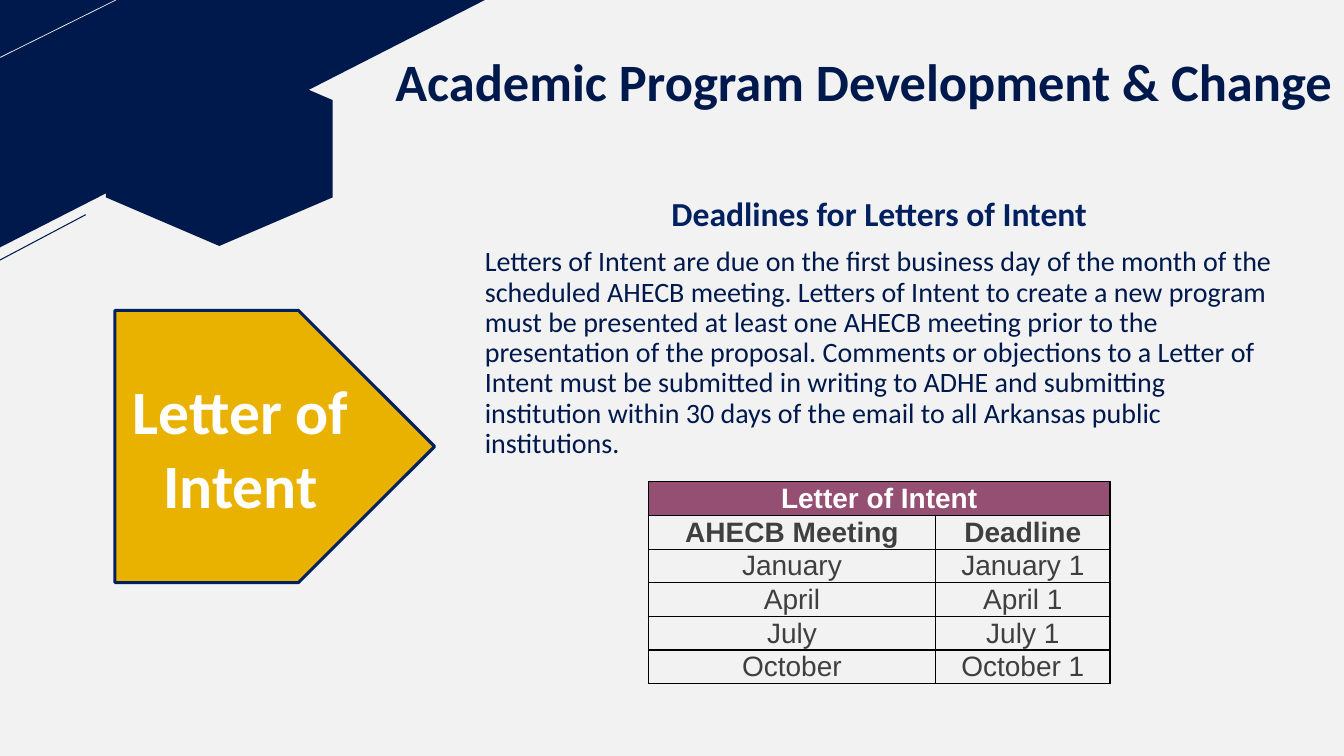
from dataclasses import dataclass

from lxml.etree import SubElement
from pptx import Presentation
from pptx.dml.color import RGBColor
from pptx.enum.shapes import MSO_CONNECTOR, MSO_SHAPE
from pptx.enum.text import MSO_ANCHOR, PP_ALIGN
from pptx.oxml.ns import qn
from pptx.util import Emu, Pt

PX = 9144  # 100 px to the inch
COLORS = {
    "paper": "F2F2F2",
    "navy": "00194C",
    "blue": "002060",
    "gold": "EAB200",
    "plum": "954F72",
    "white": "FFFFFF",
    "gray": "3F3F3F",
    "black": "000000",
}


@dataclass(frozen=True)
class Box:
    left: int
    top: int
    width: int
    height: int

    def emu(self) -> list[Emu]:
        return [px(n) for n in (self.left, self.top, self.width, self.height)]


@dataclass(frozen=True)
class Style:
    size: float
    color: str
    bold: bool = False
    align: PP_ALIGN = PP_ALIGN.CENTER
    font: str = "Calibri"
    spacing: float = 1.0


@dataclass(frozen=True)
class Block:
    kind: MSO_SHAPE
    box: Box
    fill: str
    rotation: int = 0
    outline: str = ""


@dataclass(frozen=True)
class Rule:
    start: tuple[int, int]
    end: tuple[int, int]
    color: str
    weight: float


CORNER = Block(MSO_SHAPE.RIGHT_TRIANGLE, Box(117, -118, 246, 482), "navy", 90)
HEXAGON = Block(MSO_SHAPE.HEXAGON, Box(121, 35, 193, 225), "navy", 270)
ARROW = Block(MSO_SHAPE.PENTAGON, Box(114, 308, 317, 270), "gold", 0, "blue")
RULES = [
    Rule((-2, 58), (115, 0), "paper", 0.5),
    Rule((-2, 259), (85, 213), "navy", 0.75),
]

TITLE = Style(37.5, "navy", bold=True, spacing=0.9)
HEADING = Style(24, "blue", bold=True, spacing=0.9)
BODY = Style(20, "navy", align=PP_ALIGN.LEFT, spacing=0.9)
ARROW_LABEL = Style(44, "white", bold=True)
TABLE_TITLE = Style(20, "white", bold=True, font="Arial")
TABLE_HEAD = Style(20, "gray", bold=True, font="Arial")
TABLE_BODY = Style(20, "gray", font="Arial")

BODY_TEXT = (
    "Letters of Intent are due on the first business day of the month of the "
    "scheduled AHECB meeting. Letters of Intent to create a new program must be "
    "presented at least one AHECB meeting prior to the presentation of the proposal. "
    "Comments or objections to a Letter of Intent must be submitted in writing to "
    "ADHE and submitting institution within 30 days of the email to all Arkansas "
    "public institutions."
)
MONTHS = ["January", "April", "July", "October"]
TABLE_ROWS = [
    ("Letter of Intent",),
    ("AHECB Meeting", "Deadline"),
    *((month, f"{month} 1") for month in MONTHS),
]
TABLE_BOX = Box(643, 478, 458, 192)
COLUMN_WIDTHS = [285, 173]


def px(count: int) -> Emu:
    return Emu(count * PX)


def rgb(name: str) -> RGBColor:
    return RGBColor.from_string(COLORS[name])


def write(frame, lines: list[tuple[str, Style]], gap: int = 0) -> None:
    """Fill a text frame, one paragraph a line, with gap points between them."""
    for index, (text, style) in enumerate(lines):
        para = frame.add_paragraph() if index else frame.paragraphs[0]
        para.text = text
        para.alignment = style.align
        para.line_spacing = style.spacing
        if index and gap:
            para.space_before = Pt(gap)
        para.font.name = style.font
        para.font.size = Pt(style.size)
        para.font.bold = style.bold
        para.font.color.rgb = rgb(style.color)


def add_block(page, block: Block):
    shape = page.shapes.add_shape(block.kind, *block.box.emu())
    shape.rotation = block.rotation
    shape.shadow.inherit = False
    shape.fill.solid()
    shape.fill.fore_color.rgb = rgb(block.fill)
    if block.outline:
        shape.line.color.rgb = rgb(block.outline)
        shape.line.width = Pt(2.25)
    else:
        shape.line.fill.background()
    return shape


def add_rule(page, rule: Rule) -> None:
    ends = [px(n) for n in (*rule.start, *rule.end)]
    line = page.shapes.add_connector(MSO_CONNECTOR.STRAIGHT, *ends)
    line.line.color.rgb = rgb(rule.color)
    line.line.width = Pt(rule.weight)
    SubElement(line._element.spPr, qn("a:effectLst"))


def add_text(page, box: Box, lines: list[tuple[str, Style]], gap: int = 0):
    frame = page.shapes.add_textbox(*box.emu()).text_frame
    frame.word_wrap = True
    write(frame, lines, gap)
    return frame


def add_borders(cell) -> None:
    properties = cell._tc.get_or_add_tcPr()
    for side in ("lnL", "lnR", "lnT", "lnB"):
        border = SubElement(properties, qn(f"a:{side}"), w=str(Pt(1)))
        fill = SubElement(border, qn("a:solidFill"))
        SubElement(fill, qn("a:srgbClr"), val=COLORS["black"])


def add_deadlines(page) -> None:
    table = page.shapes.add_table(len(TABLE_ROWS), 2, *TABLE_BOX.emu()).table
    table.first_row = table.horz_banding = False
    for column, width in zip(table.columns, COLUMN_WIDTHS):
        column.width = px(width)
    table.cell(0, 0).merge(table.cell(0, 1))
    styles = [TABLE_TITLE, TABLE_HEAD] + [TABLE_BODY] * len(MONTHS)
    for row, texts, style in zip(table.rows, TABLE_ROWS, styles):
        for cell in row.cells:
            cell.margin_left = cell.margin_right = px(7)
            cell.margin_top = cell.margin_bottom = 0
            cell.vertical_anchor = MSO_ANCHOR.MIDDLE
            add_borders(cell)
            if style is TABLE_TITLE:
                cell.fill.solid()
                cell.fill.fore_color.rgb = rgb("plum")
            else:
                cell.fill.background()
        for cell, text in zip(row.cells, texts):
            write(cell.text_frame, [(text, style)])


def main() -> None:
    deck = Presentation()
    deck.slide_width, deck.slide_height = px(1333), px(750)
    page = deck.slides.add_slide(deck.slide_layouts[6])
    page.background.fill.solid()
    page.background.fill.fore_color.rgb = rgb("paper")

    add_block(page, CORNER)
    for rule in RULES:
        add_rule(page, rule)
    add_block(page, HEXAGON)

    title = add_text(page, Box(381, 19, 953, 125),
                     [("Academic Program Development & Change", TITLE)])
    title.vertical_anchor = MSO_ANCHOR.MIDDLE
    title.margin_bottom = 0
    add_text(page, Box(471, 191, 802, 504),
             [("Deadlines for Letters of Intent", HEADING), (BODY_TEXT, BODY)], gap=10)
    label = add_block(page, ARROW).text_frame
    label.vertical_anchor = MSO_ANCHOR.MIDDLE
    write(label, [("Letter of", ARROW_LABEL), ("Intent", ARROW_LABEL)])
    add_deadlines(page)
    deck.save("out.pptx")


if __name__ == "__main__":
    main()
